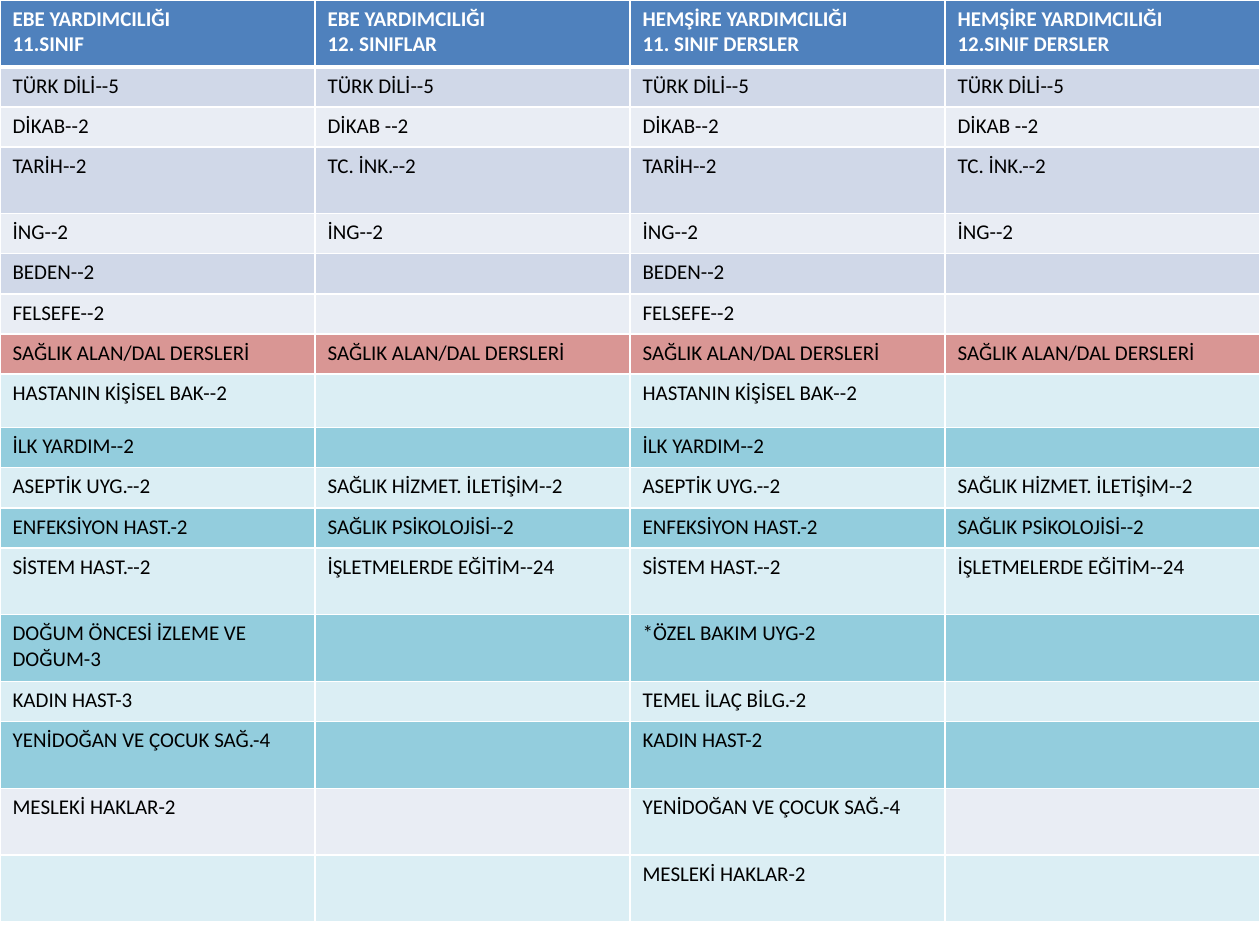
import lxml.etree
import pptx
import pptx.dml.color
import pptx.oxml.ns
import pptx.util
from dataclasses import dataclass

Pt = pptx.util.Pt
qn = pptx.oxml.ns.qn


@dataclass(frozen=True)
class Theme:
    font: str = "Calibri"
    size: int = 12
    white: str = "FFFFFF"
    black: str = "000000"
    header: str = "4F81BD"
    band_dark: str = "D0D8E8"
    band_light: str = "E9EDF4"
    section: str = "D99694"
    health_light: str = "DBEEF4"
    health_dark: str = "93CDDD"
    border: int = 1
    header_border: int = 3


class SlideBuilder:
    def __init__(self, slide, theme):
        self.slide = slide
        self.theme = theme

    def add_table(self, rows, column_width):
        """Each row is (height, fill, texts)."""
        columns = len(rows[0][2])
        total_height = sum(height for height, _, _ in rows)
        shape = self.slide.shapes.add_table(
            len(rows), columns, 0, 0, Pt(column_width * columns), Pt(total_height))
        table = shape.table
        table.horz_banding = False
        for column in table.columns:
            column.width = Pt(column_width)
        for row_index, (height, fill, texts) in enumerate(rows):
            table.rows[row_index].height = Pt(height)
            for column_index, text in enumerate(texts):
                cell = table.cell(row_index, column_index)
                self.set_borders(cell, row_index)
                self.set_fill(cell, fill)
                self.set_text(cell, text, is_header=row_index == 0)
        return table

    def set_borders(self, cell, row_index):
        theme = self.theme
        heavy_side = {0: "lnB", 1: "lnT"}.get(row_index)
        properties = cell._tc.get_or_add_tcPr()
        for side in ("lnL", "lnR", "lnT", "lnB"):
            width = theme.header_border if side == heavy_side else theme.border
            line = lxml.etree.SubElement(properties, qn(f"a:{side}"), w=str(Pt(width)))
            fill = lxml.etree.SubElement(line, qn("a:solidFill"))
            lxml.etree.SubElement(fill, qn("a:srgbClr"), val=theme.white)

    def set_fill(self, cell, color):
        cell.fill.solid()
        cell.fill.fore_color.rgb = pptx.dml.color.RGBColor.from_string(color)

    def set_text(self, cell, text, is_header):
        theme = self.theme
        cell.text_frame.text = text
        color = theme.white if is_header else theme.black
        for paragraph in cell.text_frame.paragraphs:
            for run in paragraph.runs:
                run.font.name = theme.font
                run.font.size = Pt(theme.size)
                run.font.bold = is_header
                run.font.color.rgb = pptx.dml.color.RGBColor.from_string(color)
            if not text:
                # Keeps empty cells from stretching their row
                lxml.etree.SubElement(
                    paragraph._p, qn("a:endParaRPr"), sz=str(theme.size * 100))


def course_rows(theme):
    single, medium, double = 22.9, 30.8, 38.2
    dark, light = theme.band_dark, theme.band_light
    health_dark, health_light = theme.health_dark, theme.health_light

    def shared(height, fill, grade_11, grade_12=""):
        """Both branches take the same courses."""
        return height, fill, [grade_11, grade_12] * 2

    def separate(height, fill, midwife, nurse):
        """Grade 11 differs by branch; grade 12 is empty."""
        return height, fill, [midwife, "", nurse, ""]

    return [
        (double, theme.header, [
            "EBE YARDIMCILIĞI\n11.SINIF",
            "EBE YARDIMCILIĞI\n12. SINIFLAR",
            "HEMŞİRE YARDIMCILIĞI\n11. SINIF DERSLER",
            "HEMŞİRE YARDIMCILIĞI\n12.SINIF DERSLER"]),
        # General courses
        shared(single, dark, "TÜRK DİLİ--5", "TÜRK DİLİ--5"),
        shared(single, light, "DİKAB--2", "DİKAB --2"),
        shared(double, dark, "TARİH--2", "TC. İNK.--2"),
        shared(single, light, "İNG--2", "İNG--2"),
        shared(single, dark, "BEDEN--2"),
        shared(single, light, "FELSEFE--2"),
        # Health courses
        shared(single, theme.section,
               "SAĞLIK ALAN/DAL DERSLERİ", "SAĞLIK ALAN/DAL DERSLERİ"),
        shared(medium, health_light, "HASTANIN KİŞİSEL BAK--2"),
        shared(single, health_dark, "İLK YARDIM--2"),
        shared(single, health_light, "ASEPTİK UYG.--2", "SAĞLIK HİZMET. İLETİŞİM--2"),
        shared(single, health_dark, "ENFEKSİYON HAST.-2", "SAĞLIK PSİKOLOJİSİ--2"),
        shared(double, health_light, "SİSTEM HAST.--2", "İŞLETMELERDE EĞİTİM--24"),
        separate(double, health_dark,
                 "DOĞUM ÖNCESİ İZLEME VE DOĞUM-3", "*ÖZEL BAKIM UYG-2"),
        separate(single, health_light, "KADIN HAST-3", "TEMEL İLAÇ BİLG.-2"),
        separate(double, health_dark, "YENİDOĞAN VE ÇOCUK SAĞ.-4", "KADIN HAST-2"),
        separate(double, light, "MESLEKİ HAKLAR-2", "YENİDOĞAN VE ÇOCUK SAĞ.-4"),
        separate(double, health_light, "", "MESLEKİ HAKLAR-2"),
    ]


def main():
    presentation = pptx.Presentation()
    presentation.slide_width = Pt(720)
    presentation.slide_height = Pt(540)
    slide = presentation.slides.add_slide(presentation.slide_layouts[6])

    theme = Theme()
    builder = SlideBuilder(slide, theme)
    rows = course_rows(theme)
    table = builder.add_table(rows, column_width=180)

    # The nurse column keeps the health color in the next-to-last row
    builder.set_fill(table.cell(len(rows) - 2, 2), theme.health_light)

    presentation.save("out.pptx")


if __name__ == "__main__":
    main()
